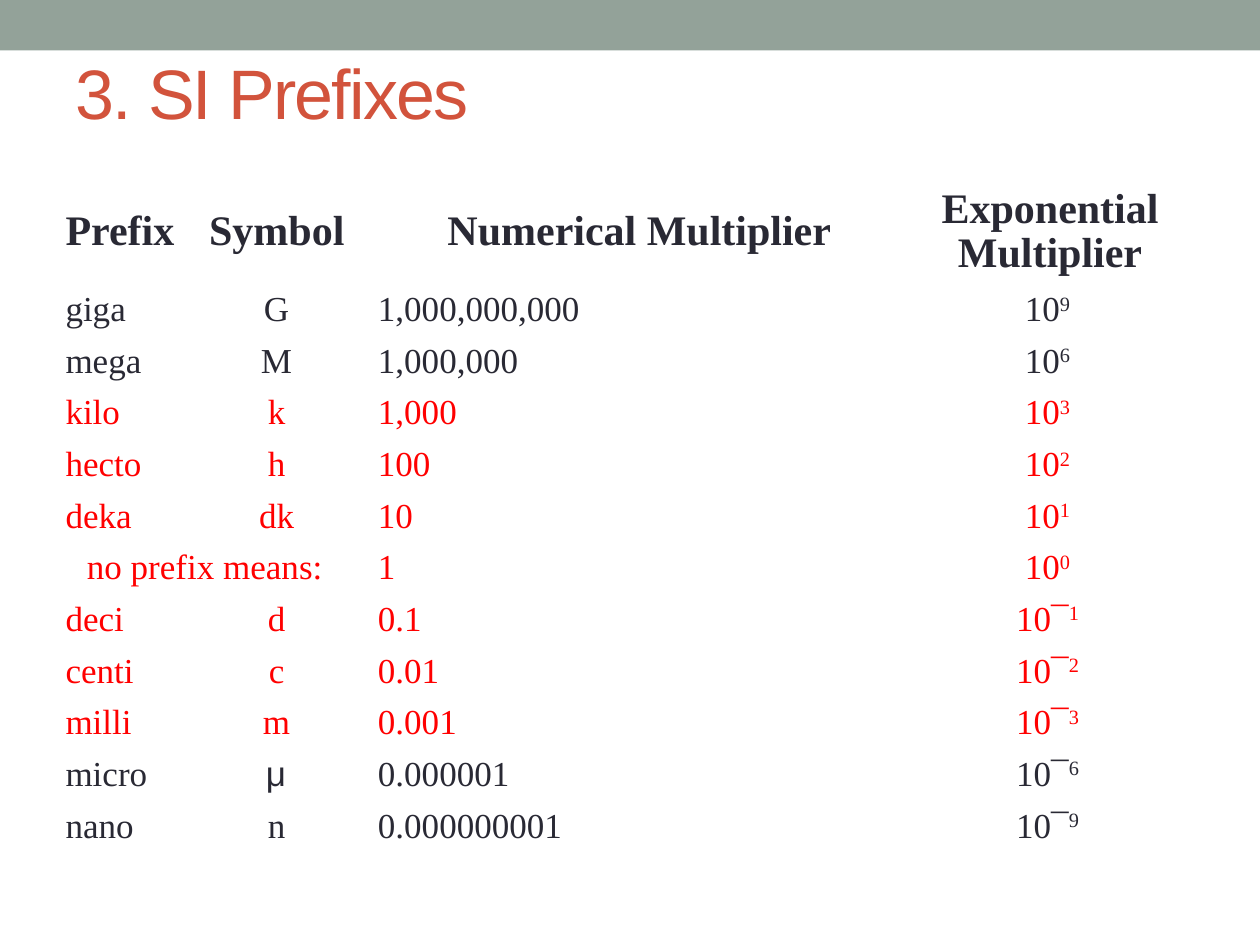
from pptx import Presentation
from pptx.dml.color import RGBColor
from pptx.enum import shapes, text
from pptx.util import Inches, Pt

SAGE = RGBColor(0x93, 0xA2, 0x99)
RUST = RGBColor(0xD2, 0x53, 0x3C)
INK = RGBColor(0x29, 0x29, 0x34)
RED = RGBColor(0xFF, 0, 0)
SERIF, SANS = "Times New Roman", "Arial"
LEFT, MID = text.PP_ALIGN.LEFT, text.PP_ALIGN.CENTER

COLS = [1.14, 1.34, 4.35, 2.17]
HEAD_H, ROW_H = 0.84, 0.41
HANG = Inches(0.38)
HEADS = [("Prefix", LEFT), ("Symbol", LEFT),
         ("Numerical Multiplier", MID), ("Exponential\nMultiplier", MID)]
# prefix, symbol, number, power of ten
ROWS = [
    ("giga", "G", "1,000,000,000", 9),
    ("mega", "M", "1,000,000", 6),
    ("kilo", "k", "1,000", 3),
    ("hecto", "h", "100", 2),
    ("deka", "dk", "10", 1),
    ("no prefix means:", None, "1", 0),
    ("deci", "d", "0.1", -1),
    ("centi", "c", "0.01", -2),
    ("milli", "m", "0.001", -3),
    ("micro", "μ", "0.000001", -6),
    ("nano", "n", "0.000000001", -9),
]


def style(para, size, color, face=SERIF, bold=False):
    font = para.font
    font.size, font.name, font.bold = Pt(size), face, bold
    font.color.rgb = color


def add_bar(slide, box):
    bar = slide.shapes.add_shape(shapes.MSO_SHAPE.RECTANGLE, *map(Inches, box))
    bar.shadow.inherit = False
    bar.fill.solid()
    bar.fill.fore_color.rgb = SAGE
    bar.line.fill.background()
    slide.shapes._spTree.insert(2, bar._element)  # send to back


def add_title(slide, box):
    title = slide.shapes.title
    title.left, title.top, title.width, title.height = map(Inches, box)
    frame = title.text_frame
    frame.text = "3. SI Prefixes"
    frame.vertical_anchor = text.MSO_ANCHOR.MIDDLE
    para = frame.paragraphs[0]
    para.alignment = LEFT
    style(para, 40, RUST, SANS)
    para.runs[0]._r.get_or_add_rPr().set("spc", "-100")


def fill_cell(cell, words, align, size=20, color=INK, face=SERIF, bold=False):
    cell.text = words
    for para in cell.text_frame.paragraphs:
        para.alignment = align
        para.line_spacing = 0.95
        props = para._p.get_or_add_pPr()
        props.set("marL", str(HANG))
        props.set("indent", str(-HANG))
        style(para, size, color, face, bold)


def add_power(cell, power):
    run = cell.text_frame.paragraphs[0].add_run()
    run.text = f"{abs(power)} "
    run._r.get_or_add_rPr().set("baseline", "30000")


def add_grid(slide, left, top):
    high = HEAD_H + ROW_H * len(ROWS)
    grid = slide.shapes.add_table(
        len(ROWS) + 1, len(COLS),
        *map(Inches, (left, top, sum(COLS), high))).table
    grid.horz_banding = grid.first_row = False
    for col, wide in zip(grid.columns, COLS):
        col.width = Inches(wide)
    for num, row in enumerate(grid.rows):
        row.height = Inches(ROW_H if num else HEAD_H)
    for cell in grid.iter_cells():
        cell.fill.background()
        cell.vertical_anchor = text.MSO_ANCHOR.MIDDLE
        cell.margin_top = cell.margin_bottom = Inches(0.04)

    # Header row
    for col, (words, align) in enumerate(HEADS):
        fill_cell(grid.cell(0, col), words, align, 24, bold=True)

    # One row for each prefix; common ones in red
    for num, (name, sign, value, power) in enumerate(ROWS, 1):
        cells = [grid.cell(num, col) for col in range(len(COLS))]
        color = RED if abs(power) <= 3 else INK
        if sign:
            fill_cell(cells[0], name, LEFT, color=color)
            face = SANS if sign == "μ" else SERIF
            fill_cell(cells[1], sign + " ", MID, color=color, face=face)
        else:
            cells[0].merge(cells[1])
            fill_cell(cells[0], name + " ", MID, color=color)
        fill_cell(cells[2], value, LEFT, color=color)
        fill_cell(cells[3], "10¯" if power < 0 else "10", MID, color=color)
        add_power(cells[3], power)


def main():
    deck = Presentation()
    deck.slide_width, deck.slide_height = Inches(10), Inches(7.5)
    slide = deck.slides.add_slide(deck.slide_layouts[5])
    add_bar(slide, (0, 0, 10, 0.4))
    add_title(slide, (0.5, 0.13, 8.25, 1.2))
    add_grid(slide, 0.42, 1.42)
    deck.save("out.pptx")


if __name__ == "__main__":
    main()
